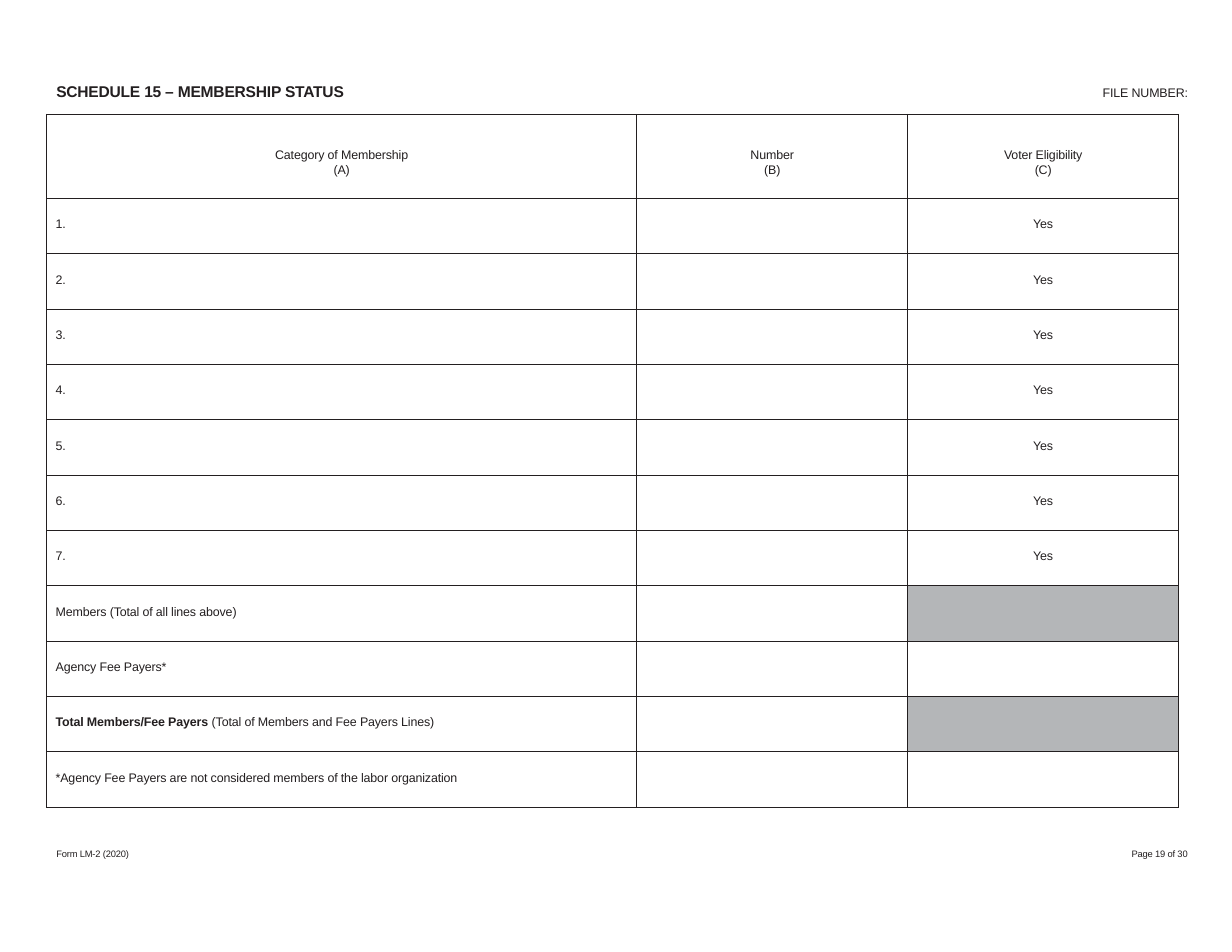
from lxml import etree
from pptx import Presentation
from pptx.dml.color import RGBColor
from pptx.enum.text import MSO_ANCHOR, PP_ALIGN
from pptx.oxml.ns import qn
from pptx.util import Pt

LEFT, CENTER = PP_ALIGN.LEFT, PP_ALIGN.CENTER
MIDDLE = MSO_ANCHOR.MIDDLE
COLORS = {"ink": "231F20", "shade": "B4B6B8"}
FONT = "Arial"


def format_runs(paragraph, size, bold=False):
    for run in paragraph.runs:
        run.font.name = FONT
        run.font.size = Pt(size)
        run.font.bold = bold
        run.font.color.rgb = RGBColor.from_string(COLORS["ink"])
        run.font._element.set("spc", "-10")  # hundredths of a point


def add_borders(cell):
    properties = cell._tc.get_or_add_tcPr()
    for side in ("lnL", "lnR", "lnT", "lnB"):
        line = etree.SubElement(properties, qn(f"a:{side}"), w=str(Pt(0.5)))
        fill = etree.SubElement(line, qn("a:solidFill"))
        etree.SubElement(fill, qn("a:srgbClr"), val=COLORS["ink"])


presentation = Presentation()
presentation.slide_width = Pt(792)
presentation.slide_height = Pt(612)
slide = presentation.slides.add_slide(presentation.slide_layouts[6])

# Page header and footer: text, left, top, width, height, size, bold
labels = [
    ("SCHEDULE 15 – MEMBERSHIP STATUS", 35.2, 52, 192.2, 13, 10, True),
    ("FILE NUMBER:", 707.8, 54, 58.3, 11.5, 8, False),
    ("Form LM-2 (2020)", 35.2, 544.4, 130.3, 8, 6, False),
    ("Page 19 of 30", 726.5, 544.4, 39.6, 8, 6, False),
]
for text, left, top, width, height, size, bold in labels:
    box = slide.shapes.add_textbox(Pt(left), Pt(top), Pt(width), Pt(height))
    frame = box.text_frame
    frame.margin_left = frame.margin_top = Pt(1)
    frame.margin_right = frame.margin_bottom = 0
    frame.text = text
    format_runs(frame.paragraphs[0], size, bold)

# Membership table
total_label, total_note = "Total Members/Fee Payers ", "(Total of Members and Fee Payers Lines)"
rows = [
    ("Category of Membership\n(A)", "Number\n(B)", "Voter Eligibility\n(C)"),
    *((f"{number}.", "", "Yes") for number in range(1, 8)),
    ("Members (Total of all lines above)", "", ""),
    ("Agency Fee Payers*", "", ""),
    (total_label, "", ""),
    ("*Agency Fee Payers are not considered members of the labor organization", "", ""),
]
shaded_rows = (8, 10)
column_widths = (379.4, 174.2, 174.2)
header_height, row_height = 54, 35.6

table = slide.shapes.add_table(
    len(rows), len(column_widths), Pt(30), Pt(73.5), Pt(sum(column_widths)),
    Pt(header_height + row_height * (len(rows) - 1)),
).table
table.first_row = table.horz_banding = False
for column, width in zip(table.columns, column_widths):
    column.width = Pt(width)

for row_index, texts in enumerate(rows):
    is_header = row_index == 0
    table.rows[row_index].height = Pt(header_height if is_header else row_height)
    for column_index, text in enumerate(texts):
        cell = table.cell(row_index, column_index)
        is_label = column_index == 0 and not is_header
        cell.vertical_anchor = MIDDLE
        cell.margin_left = Pt(5.8 if is_label else 0)
        cell.margin_right = 0
        cell.margin_top = Pt(8 if is_header else 0)
        cell.margin_bottom = Pt(0 if is_header else 2)
        add_borders(cell)
        if column_index == 2 and row_index in shaded_rows:
            cell.fill.solid()
            cell.fill.fore_color.rgb = RGBColor.from_string(COLORS["shade"])
        else:
            cell.fill.background()
        if not text:
            continue
        cell.text_frame.text = text
        for paragraph in cell.text_frame.paragraphs:
            if text == total_label:
                paragraph.add_run().text = total_note
            paragraph.alignment = LEFT if is_label else CENTER
            if is_header:
                paragraph.line_spacing = Pt(9.2)
            format_runs(paragraph, 8)
            if text == total_label:
                paragraph.runs[0].font.bold = True

presentation.save("out.pptx")
